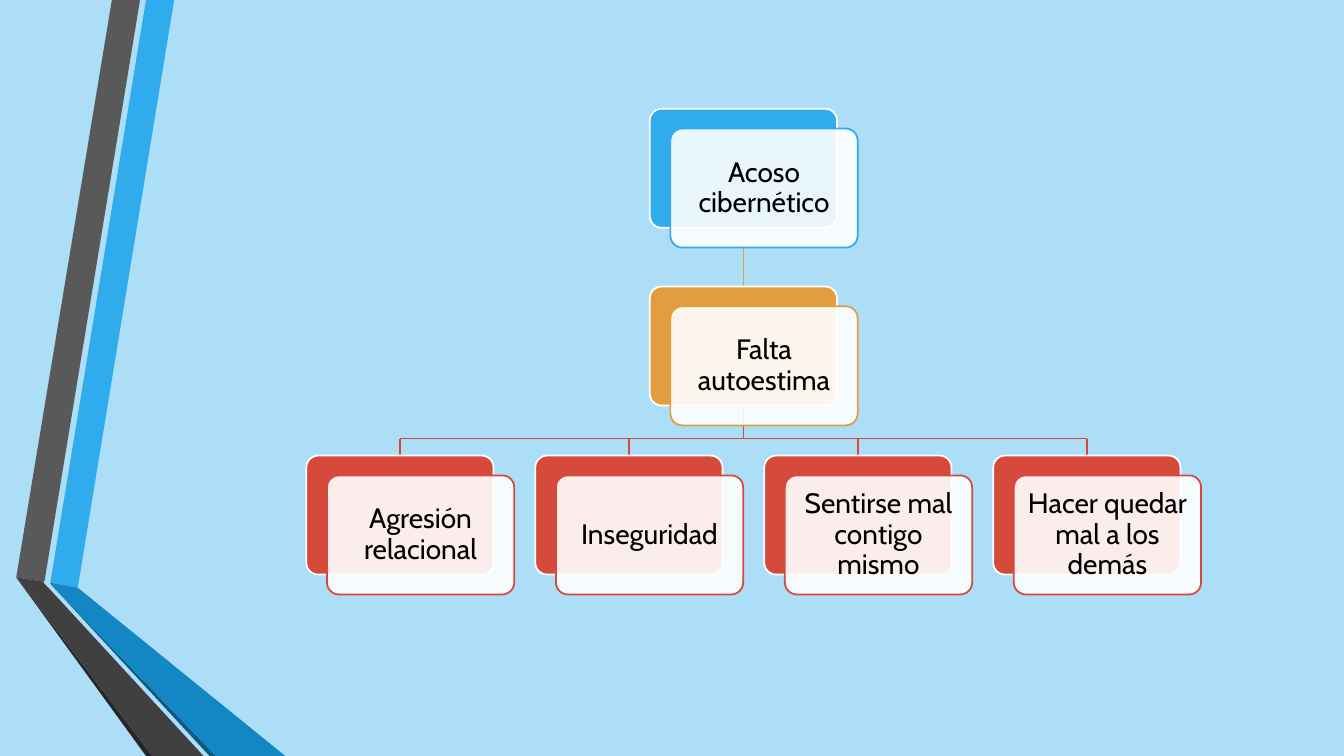
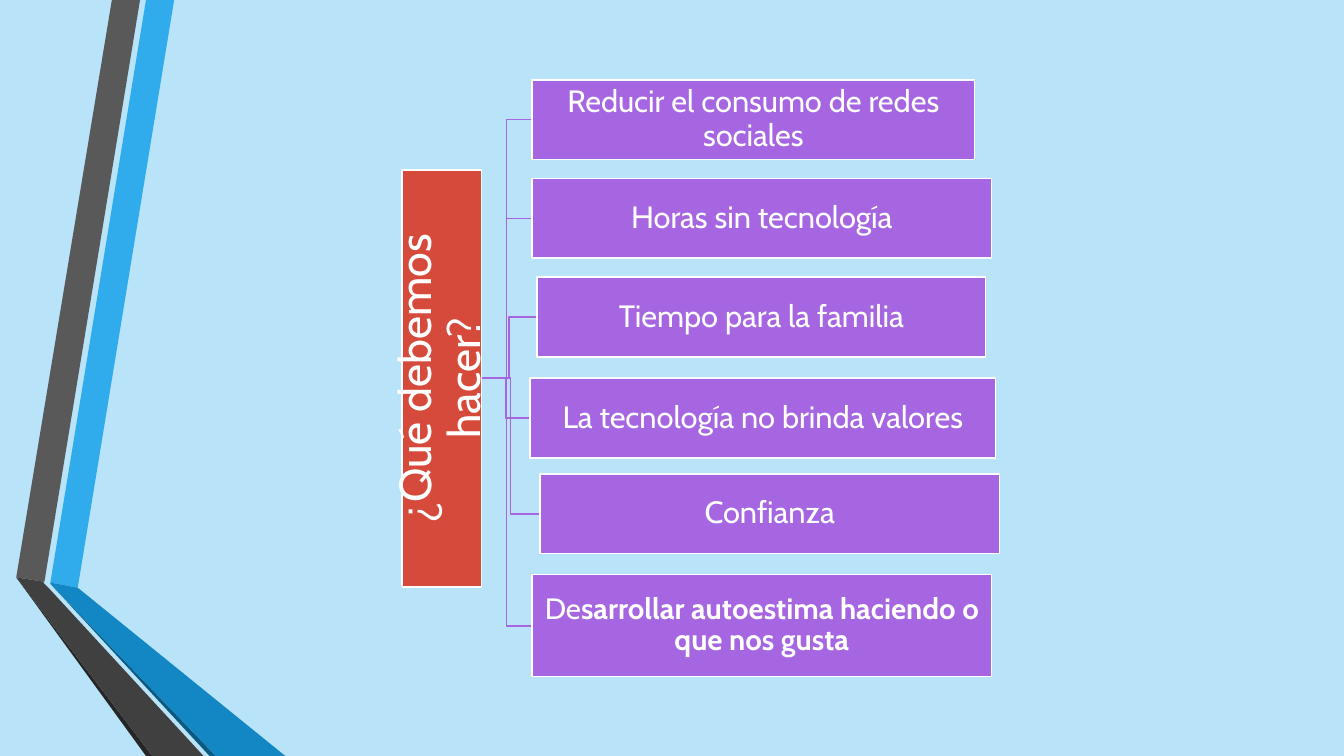
from dataclasses import dataclass

from lxml import etree
from pptx import Presentation
from pptx.dml.color import RGBColor
from pptx.enum.shapes import MSO_CONNECTOR, MSO_SHAPE
from pptx.enum.text import MSO_ANCHOR, PP_ALIGN
from pptx.oxml.ns import qn
from pptx.util import Cm, Pt

RECT, ROUND = MSO_SHAPE.RECTANGLE, MSO_SHAPE.ROUNDED_RECTANGLE
STRAIGHT, ELBOW = MSO_CONNECTOR.STRAIGHT, MSO_CONNECTOR.ELBOW
MIDDLE, CENTER = MSO_ANCHOR.MIDDLE, PP_ALIGN.CENTER


@dataclass(frozen=True)
class Theme:
    font: str = "Cabin"
    sky: str = "ACDEF7"
    pale_sky: str = "B9E3F8"
    white: str = "FFFFFF"
    black: str = "000000"
    blue: str = "30ACEC"
    deep_blue: str = "1287C3"
    navy: str = "0C5A82"
    grey: str = "595959"
    dark_grey: str = "404040"
    charcoal: str = "262626"
    orange: str = "E29D3E"
    red: str = "D64A3B"
    purple: str = "A666E1"
    line: float = 1.25
    card_size: int = 20
    action_size: int = 22
    last_size: int = 21
    question_size: int = 32


T = Theme()

# Folded ribbon at the left: colour and outline in cm
RIBBON = [
    (T.blue, [(1.27, 14.68), (1.96, 14.81), (4.39, 0), (3.68, 0)]),
    (T.grey, [(3.53, 0), (2.82, 0), (0.41, 14.55), (1.12, 14.66)]),
    (T.charcoal, [(0.41, 14.55), (3.68, 19.05), (3.84, 19.05)]),
    (T.navy, [(1.27, 14.71), (5.28, 19.05), (5.44, 19.05)]),
    (T.deep_blue, [(1.27, 14.68), (1.27, 14.71), (5.44, 19.05),
                   (7.19, 19.05), (1.96, 14.81)]),
    (T.dark_grey, [(5.13, 19.05), (1.22, 14.81), (1.09, 14.68),
                   (1.12, 14.66), (0.41, 14.55), (3.84, 19.05)]),
]

# Hierarchy cards, in cm
CARD_W, CARD_H = 4.72, 3
SHIFT_X, SHIFT_Y = 0.52, 0.5
FIRST_X, PITCH = 7.72, 5.77
CAUSE_Y, EFFECT_Y, RESULT_Y, BUS_Y = 2.74, 7.22, 11.48, 11.05
RESULTS = ["Agresión relacional", "Inseguridad",
           "Sentirse mal contigo mismo", "Hacer quedar mal a los demás"]

# Action boxes: left, top, width, height in cm, then (text, bold) runs
ACTION_H = 2.01
ACTIONS = [
    (13.41, 2.01, 11.15, ACTION_H, [("Reducir el consumo de redes sociales", False)]),
    (13.41, 4.5, 11.58, ACTION_H, [("Horas sin tecnología", False)]),
    (13.54, 6.99, 11.3, ACTION_H, [("Tiempo para la familia", False)]),
    (13.36, 9.53, 11.73, ACTION_H, [("La tecnología no brinda valores", False)]),
    (13.61, 11.94, 11.58, ACTION_H, [("Confianza", False)]),
    (13.41, 14.48, 11.58, 2.57,
     [("De", False), ("sarrollar autoestima haciendo o que nos gusta", True)]),
]


def rgb(color):
    return RGBColor.from_string(color)


def apply(target, values):
    for name, value in values.items():
        setattr(target, name, value)


def paint(sp, fill, line=None):
    sp.shadow.inherit = False
    sp.fill.solid()
    sp.fill.fore_color.rgb = rgb(fill)
    if line:
        sp.line.color.rgb = rgb(line)
        sp.line.width = Pt(T.line)
    else:
        sp.line.fill.background()


def set_opacity(sp, percent):
    color = sp._element.spPr.find(qn("a:solidFill")).find(qn("a:srgbClr"))
    etree.SubElement(color, qn("a:alpha")).set("val", str(percent * 1000))


def add_box(s, kind, x, y, w, h, fill, line):
    sp = s.shapes.add_shape(kind, Cm(x), Cm(y), Cm(w), Cm(h))
    if kind == ROUND:
        sp.adjustments[0] = 0.1
    paint(sp, fill, line)
    return sp


def write(sp, runs, size, color, inset):
    """Fill a shape with one centred paragraph of (text, bold) runs."""
    tf = sp.text_frame
    margins = ("margin_left", "margin_top", "margin_right", "margin_bottom")
    apply(tf, {"word_wrap": True, "vertical_anchor": MIDDLE,
               **dict.fromkeys(margins, Cm(inset))})
    p = tf.paragraphs[0]
    apply(p, {"alignment": CENTER, "line_spacing": 0.9})
    for text, bold in runs:
        r = p.add_run()
        r.text = text
        apply(r.font, {"name": T.font, "size": Pt(size), "bold": bold})
        r.font.color.rgb = rgb(color)


def add_line(s, kind, x1, y1, x2, y2, color):
    cn = s.shapes.add_connector(kind, Cm(x1), Cm(y1), Cm(x2), Cm(y2))
    cn.line.color.rgb = rgb(color)
    cn.line.width = Pt(T.line)
    etree.SubElement(cn._element.spPr, qn("a:effectLst"))


def add_card(s, x, y, text, color):
    """Coloured card with a translucent white card shifted over it."""
    add_box(s, ROUND, x, y, CARD_W, CARD_H, color, T.white)
    front = add_box(s, ROUND, x + SHIFT_X, y + SHIFT_Y, CARD_W, CARD_H,
                    T.white, color)
    set_opacity(front, 90)
    write(front, [(text, False)], T.card_size, T.black, 0.2)


def add_ribbon(s):
    for color, points in RIBBON:
        start, *rest = [(Cm(x), Cm(y)) for x, y in points]
        fb = s.shapes.build_freeform(*start)
        fb.add_line_segments(rest, close=True)
        paint(fb.convert_to_shape(), color)


def new_slide(prs, background):
    s = prs.slides.add_slide(prs.slide_layouts[6])
    s.background.fill.solid()
    s.background.fill.fore_color.rgb = rgb(background)
    add_ribbon(s)
    return s


def build_hierarchy(prs):
    s = new_slide(prs, T.sky)
    lefts = [FIRST_X + i * PITCH for i in range(len(RESULTS))]
    parent_x = (lefts[0] + lefts[-1]) / 2
    mids = [x + CARD_W / 2 for x in lefts]
    trunk_x = parent_x + CARD_W / 2

    # Lines lie behind the cards
    add_line(s, STRAIGHT, trunk_x, EFFECT_Y + CARD_H, trunk_x, BUS_Y, T.red)
    add_line(s, STRAIGHT, mids[0], BUS_Y, mids[-1], BUS_Y, T.red)
    for x in mids:
        add_line(s, STRAIGHT, x, BUS_Y, x, RESULT_Y, T.red)
    add_line(s, STRAIGHT, trunk_x, CAUSE_Y + CARD_H, trunk_x, EFFECT_Y, T.orange)

    # Cards
    add_card(s, parent_x, CAUSE_Y, "Acoso cibernético", T.blue)
    add_card(s, parent_x, EFFECT_Y, "Falta autoestima", T.orange)
    for x, text in zip(lefts, RESULTS):
        add_card(s, x, RESULT_Y, text, T.red)


def build_actions(prs):
    s = new_slide(prs, T.pale_sky)

    # Branches from the question to each action
    for x, y, w, h, runs in ACTIONS:
        add_line(s, ELBOW, 12.12, 9.53, x, y + h / 2, T.purple)

    # Question, turned to read upwards
    question = add_box(s, RECT, 5.87, 8.53, 10.52, ACTION_H, T.red, T.white)
    question.rotation = 270
    write(question, [("¿Qué debemos hacer?", False)], T.question_size,
          T.white, 0.05)

    # Actions
    for x, y, w, h, runs in ACTIONS:
        size = T.action_size if h == ACTION_H else T.last_size
        write(add_box(s, RECT, x, y, w, h, T.purple, T.white), runs, size,
              T.white, 0.04)


def main():
    prs = Presentation()
    prs.slide_width, prs.slide_height = Cm(33.87), Cm(19.05)
    build_hierarchy(prs)
    build_actions(prs)
    prs.save("out.pptx")


if __name__ == "__main__":
    main()
